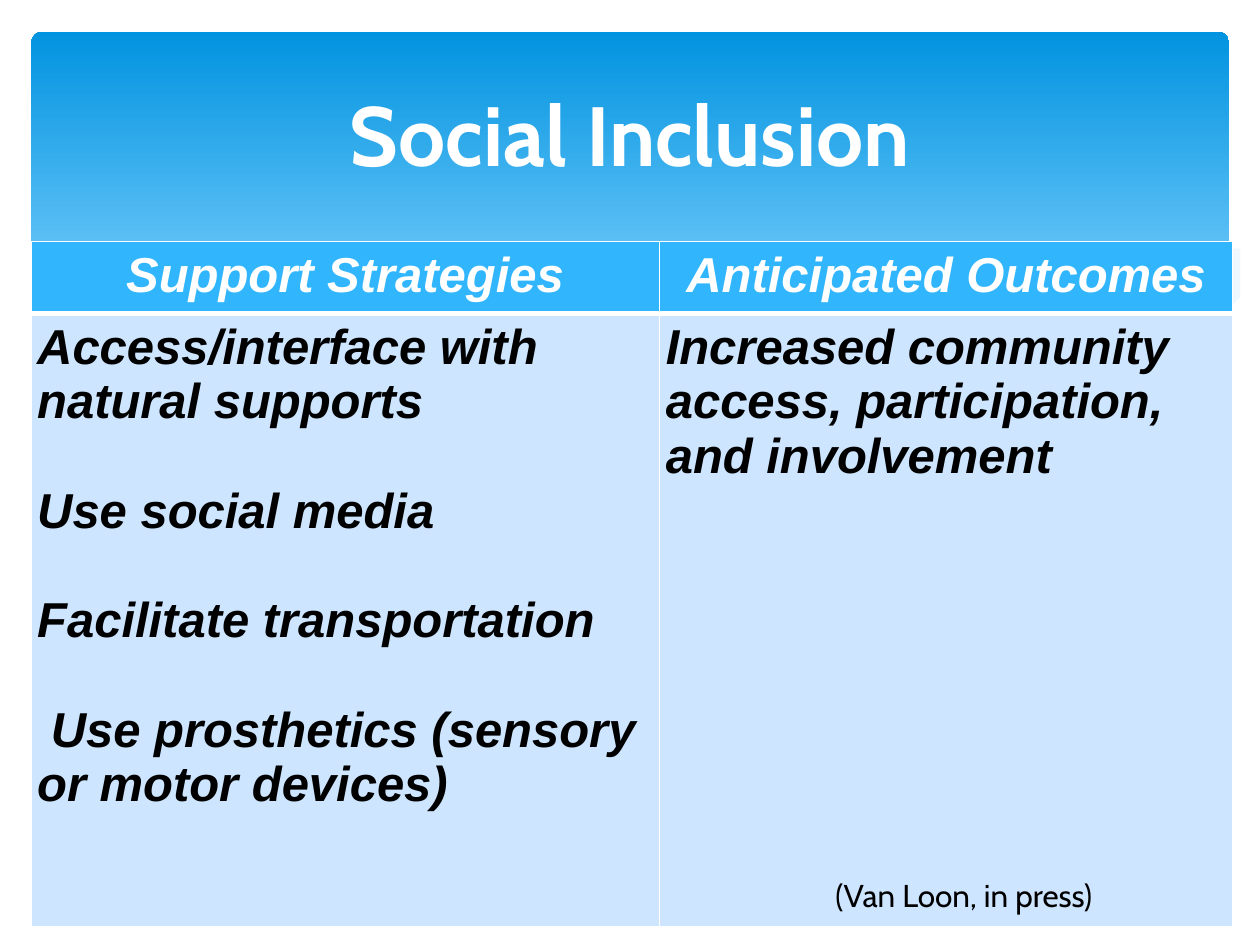
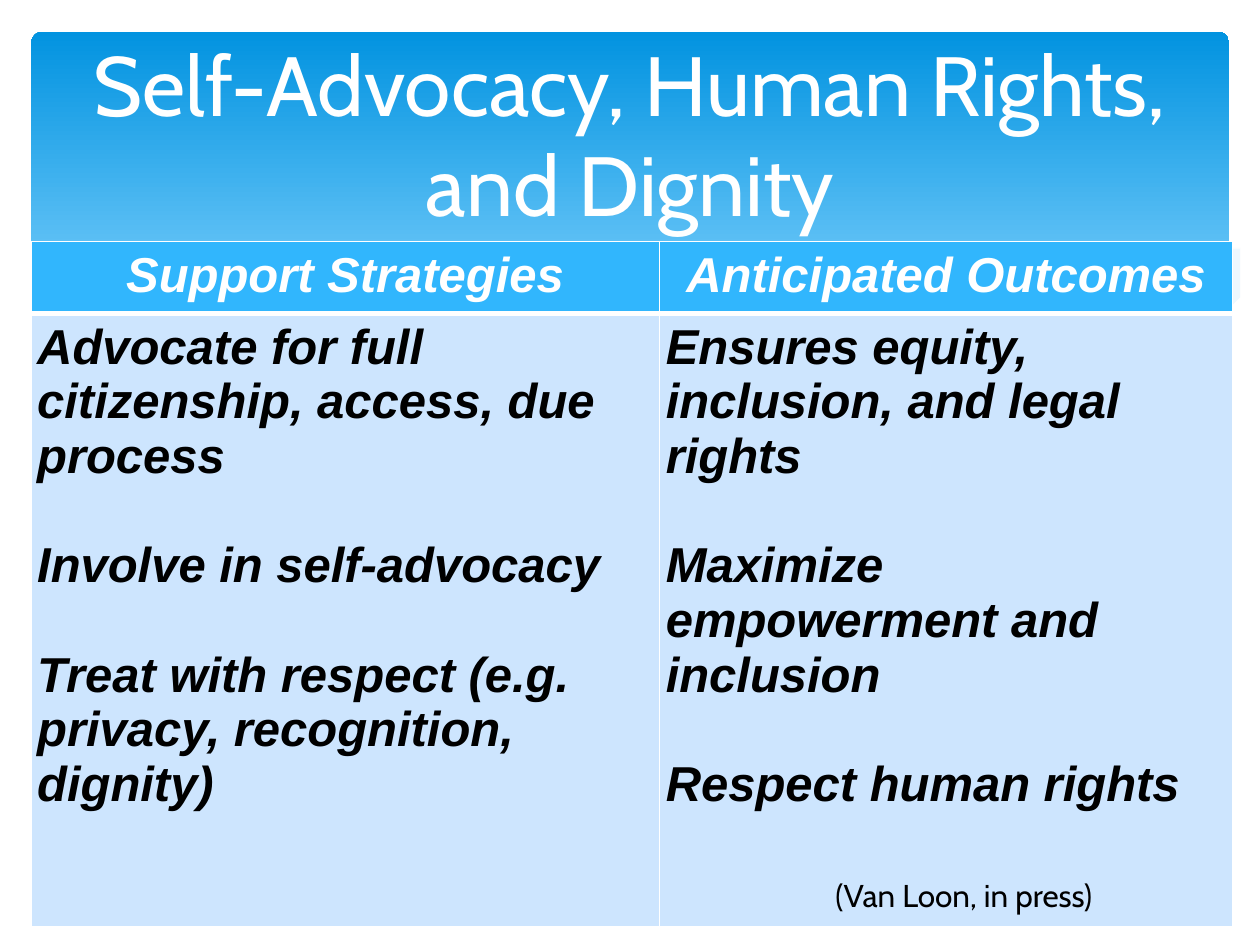
from lxml import etree
from pptx import Presentation
from pptx.dml.color import RGBColor
from pptx.enum.shapes import MSO_SHAPE
from pptx.enum.text import MSO_ANCHOR, PP_ALIGN
from pptx.oxml.ns import qn
from pptx.util import Cm, Pt

ROUNDED = MSO_SHAPE.ROUNDED_RECTANGLE
TOP, MIDDLE = MSO_ANCHOR.TOP, MSO_ANCHOR.MIDDLE
LEFT, CENTER = PP_ALIGN.LEFT, PP_ALIGN.CENTER

WHITE = RGBColor(0xFF, 0xFF, 0xFF)
BLACK = RGBColor(0x00, 0x00, 0x00)
SKY_LIGHT = RGBColor(0x83, 0xD3, 0xFE)
SKY_DEEP = RGBColor(0x02, 0x93, 0xE0)
WAVE_PALE = RGBColor(0xC6, 0xE7, 0xFC)
HEADER_BLUE = RGBColor(0x31, 0xB6, 0xFD)
BODY_BLUE = RGBColor(0xCD, 0xE5, 0xFE)

BAND_BOX = (0.63, 0.64, 24.15, 6.86)
TITLE_BOX = (1.27, 0.94, 22.86, 3.48)
TABLE_BOX = (0.62, 4.87, 24.23, 13.81)
CREDIT_BOX = (16.71, 17.53, 7.67, 0.99)

INSET = 0.13
HEADER_HEIGHT = 1.45
LEFT_SHARE = 0.523
BLANK_LINE = Pt(31.3)

TITLE_FONT = {"name": "Cabin", "size": Pt(48)}
CREDIT_FONT = {"name": "Cabin", "size": Pt(18)}
TABLE_FONT = {"name": "Arial", "size": Pt(28), "bold": True, "italic": True}

FAR_WAVE = [
    (24.13, 4.45), (22.76, 4.7), (21.23, 5.03), (19.15, 5.54), (17.3, 5.89),
    (16.15, 6.1), (17.27, 6.25), (18.9, 6.38), (20.29, 6.4), (21.95, 6.27),
    (23.11, 6.02), (24.16, 5.64),
]
MIDDLE_WAVE = [
    (22.05, 6.3), (19.86, 5.97), (17.3, 5.46), (15.34, 5), (13.82, 4.65),
    (12.78, 4.45), (11.79, 4.29), (10.57, 4.17), (9.5, 4.09), (8.53, 4.09),
    (7.7, 4.11), (6.63, 4.22), (8.05, 4.42), (9.63, 4.72), (11.84, 5.26),
    (13.74, 5.66), (15.88, 6.07), (17.7, 6.32), (19.58, 6.45), (21.13, 6.4),
]
FALLING_CREST = [
    (7.21, 4.32), (7.87, 4.22), (8.59, 4.17), (9.55, 4.11), (10.36, 4.11),
    (11.28, 4.17), (12.32, 4.24), (13.49, 4.37), (14.81, 4.55), (16.26, 4.78),
    (17.83, 5.11), (19.56, 5.51), (22.4, 6.27),
]
RISING_CREST = [
    (14.94, 5.89), (17.02, 5.33), (19.08, 4.85), (20.6, 4.55), (21.74, 4.34),
    (22.48, 4.24), (23.16, 4.14), (24.13, 4.06),
]
FRONT_WAVE = [
    (24.18, 5.61), (22.99, 6.02), (21.59, 6.3), (19.91, 6.4), (18.26, 6.32),
    (16.33, 6.1), (14.07, 5.72), (12.14, 5.28), (9.98, 4.78), (8.64, 4.5),
    (7.37, 4.29), (6.25, 4.14), (5.21, 4.06), (4.27, 4.04), (3.45, 4.04),
    (2.72, 4.09), (2.06, 4.17), (1.52, 4.27), (0.86, 4.42), (0.38, 4.57),
    (-0.05, 4.78), (-0.05, 7.72), (24.18, 7.72),
]

HEADINGS = ("Support Strategies", "Anticipated Outcomes")
TOPICS = [
    {
        "title": "Social Inclusion",
        "bold": True,
        "strategies": [
            "Access/interface with natural supports",
            "Use social media",
            "Facilitate transportation",
            " Use prosthetics (sensory or motor devices)",
        ],
        "outcomes": ["Increased community access, participation, and involvement"],
    },
    {
        "title": "Self-Advocacy, Human Rights, and Dignity",
        "bold": False,
        "strategies": [
            "Advocate for full citizenship, access, due process",
            "Involve in self-advocacy",
            "Treat with respect (e.g. privacy, recognition, dignity)",
        ],
        "outcomes": [
            "Ensures equity, inclusion, and legal rights",
            "Maximize empowerment and inclusion",
            "Respect human rights",
        ],
    },
]


def set_all(target, values):
    """Set each named attribute on the target."""
    for key, value in values.items():
        setattr(target, key, value)


def write(frame, lines, font, color, align=LEFT):
    """Write one paragraph per line, a blank line's height apart."""
    for index, line in enumerate(lines):
        paragraph = frame.paragraphs[0] if index == 0 else frame.add_paragraph()
        paragraph.alignment = align
        paragraph.space_before = BLANK_LINE if index else Pt(0)
        run = paragraph.add_run()
        run.text = line
        set_all(run.font, font)
        run.font.color.rgb = color


def add_label(slide, box, text, font, color, align, anchor):
    """Place a wrapped line of text in a box."""
    frame = slide.shapes.add_textbox(*map(Cm, box)).text_frame
    set_all(frame, {"word_wrap": True, "vertical_anchor": anchor})
    sides = ("margin_left", "margin_top", "margin_right", "margin_bottom")
    set_all(frame, dict.fromkeys(sides, Cm(INSET)))
    write(frame, [text], font, color, align)


def add_curve(slide, box, points, closed):
    """Draw an outline whose points are relative to the box."""
    left, top = box[:2]
    placed = [(left + x, top + y) for x, y in points]
    builder = slide.shapes.build_freeform(*placed[0], scale=Cm(1))
    builder.add_line_segments(placed[1:], close=closed)
    curve = builder.convert_to_shape()
    curve.shadow.inherit = False
    return curve


def add_wave(slide, box, points, color, opacity):
    """Draw a filled wave with the given percentage of opacity."""
    wave = add_curve(slide, box, points, True)
    wave.fill.solid()
    wave.fill.fore_color.rgb = color
    wave.line.fill.background()
    if opacity < 100:
        tint = wave.fill._xPr.find(qn("a:solidFill"))[0]
        etree.SubElement(tint, qn("a:alpha"), val=str(opacity * 1000))


def add_crest(slide, box, points):
    """Draw a thin white wave line."""
    crest = add_curve(slide, box, points, False)
    crest.fill.background()
    crest.line.color.rgb = WHITE
    crest.line.width = Pt(0.75)


def add_band(slide, box):
    """Draw the gradient band with its waves."""
    band = slide.shapes.add_shape(ROUNDED, *map(Cm, box))
    band.adjustments[0] = 0.034
    band.shadow.inherit = False
    band.line.fill.background()
    band.fill.gradient()
    band.fill.gradient_angle = 90
    stops = ((0.1, SKY_LIGHT), (1, SKY_DEEP))
    for stop, (position, color) in zip(band.fill.gradient_stops, stops):
        stop.position = position
        stop.color.rgb = color
    add_wave(slide, box, FAR_WAVE, WAVE_PALE, 29)
    add_wave(slide, box, MIDDLE_WAVE, WAVE_PALE, 40)
    add_crest(slide, box, FALLING_CREST)
    add_crest(slide, box, RISING_CREST)
    add_wave(slide, box, FRONT_WAVE, WHITE, 100)


def add_borders(cell, widths):
    """Give a cell white borders, in points by side."""
    properties = cell._tc.get_or_add_tcPr()
    for side, width in widths.items():
        line = etree.SubElement(properties, qn(f"a:ln{side}"), w=str(Pt(width)))
        fill = etree.SubElement(line, qn("a:solidFill"))
        etree.SubElement(fill, qn("a:srgbClr"), val=str(WHITE))


def fill_cell(cell, lines, ink, paper, align, borders):
    """Style a table cell and write its lines."""
    sides = ("margin_left", "margin_top", "margin_right", "margin_bottom")
    set_all(cell, dict.fromkeys(sides, Cm(INSET)))
    cell.vertical_anchor = TOP
    add_borders(cell, borders)
    cell.fill.solid()
    cell.fill.fore_color.rgb = paper
    write(cell.text_frame, lines, TABLE_FONT, ink, align)


def add_support_table(slide, box, strategies, outcomes):
    """Set strategies beside their outcomes under a heading row."""
    width, height = box[2:]
    table = slide.shapes.add_table(2, 2, *map(Cm, box)).table
    table.horz_banding = False
    for column, share in zip(table.columns, (LEFT_SHARE, 1 - LEFT_SHARE)):
        column.width = Cm(width * share)
    for row, row_height in zip(table.rows, (HEADER_HEIGHT, height - HEADER_HEIGHT)):
        row.height = Cm(row_height)
    header_borders = {"L": 1, "R": 1, "T": 1, "B": 3}
    body_borders = {"L": 1, "R": 1, "T": 3, "B": 1}
    for index, (heading, lines) in enumerate(zip(HEADINGS, (strategies, outcomes))):
        fill_cell(table.cell(0, index), [heading], WHITE, HEADER_BLUE, CENTER, header_borders)
        fill_cell(table.cell(1, index), lines, BLACK, BODY_BLUE, LEFT, body_borders)


def add_topic_slide(deck, topic):
    """Build one topic slide."""
    slide = deck.slides.add_slide(deck.slide_layouts[6])
    add_band(slide, BAND_BOX)
    add_support_table(slide, TABLE_BOX, topic["strategies"], topic["outcomes"])
    title_font = {**TITLE_FONT, "bold": topic["bold"]}
    add_label(slide, TITLE_BOX, topic["title"], title_font, WHITE, CENTER, MIDDLE)
    add_label(slide, CREDIT_BOX, "(Van Loon, in press)", CREDIT_FONT, BLACK, LEFT, TOP)


def main():
    """Build and save the deck."""
    deck = Presentation()
    deck.slide_width, deck.slide_height = Cm(25.4), Cm(19.05)
    for topic in TOPICS:
        add_topic_slide(deck, topic)
    deck.save("out.pptx")


if __name__ == "__main__":
    main()
